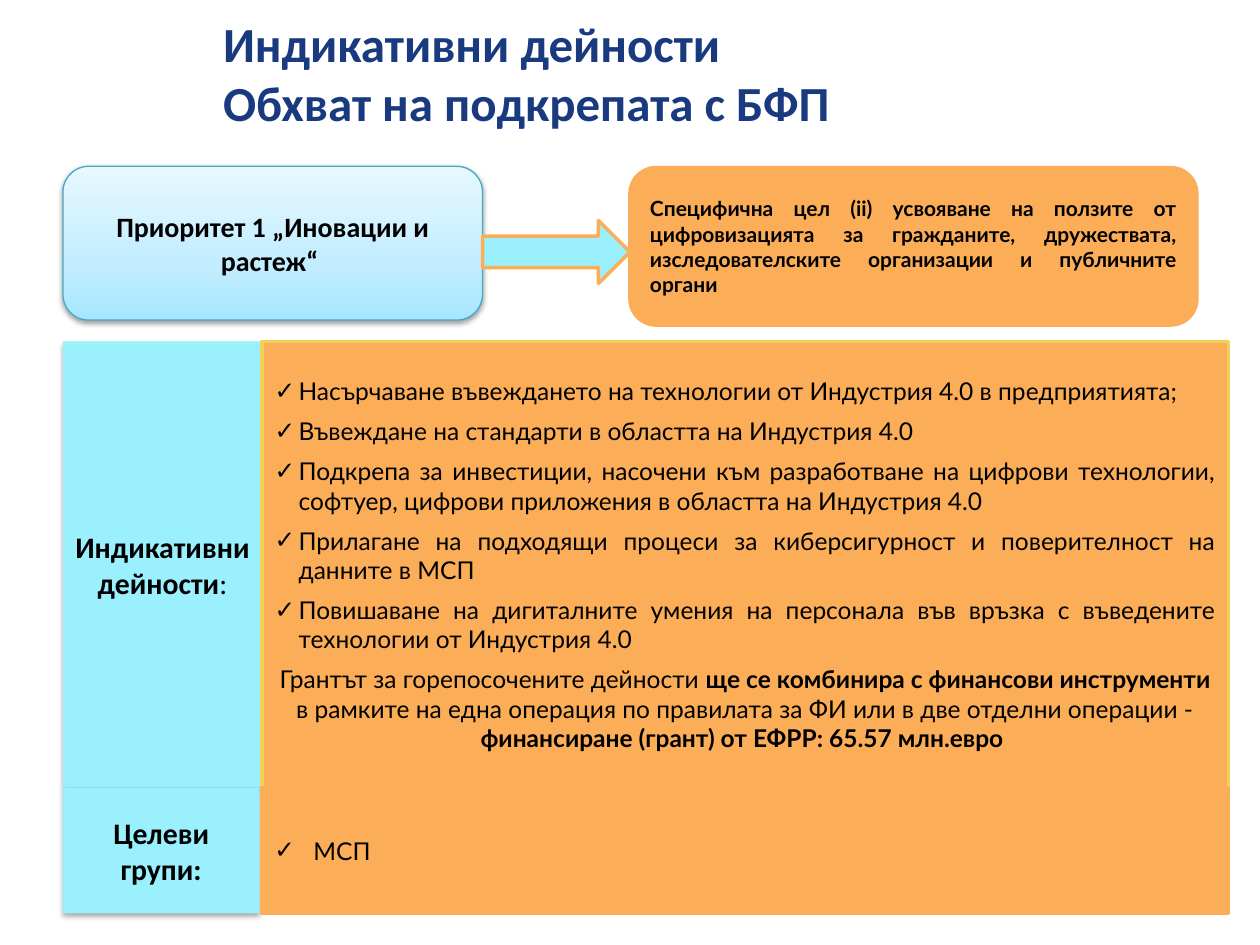
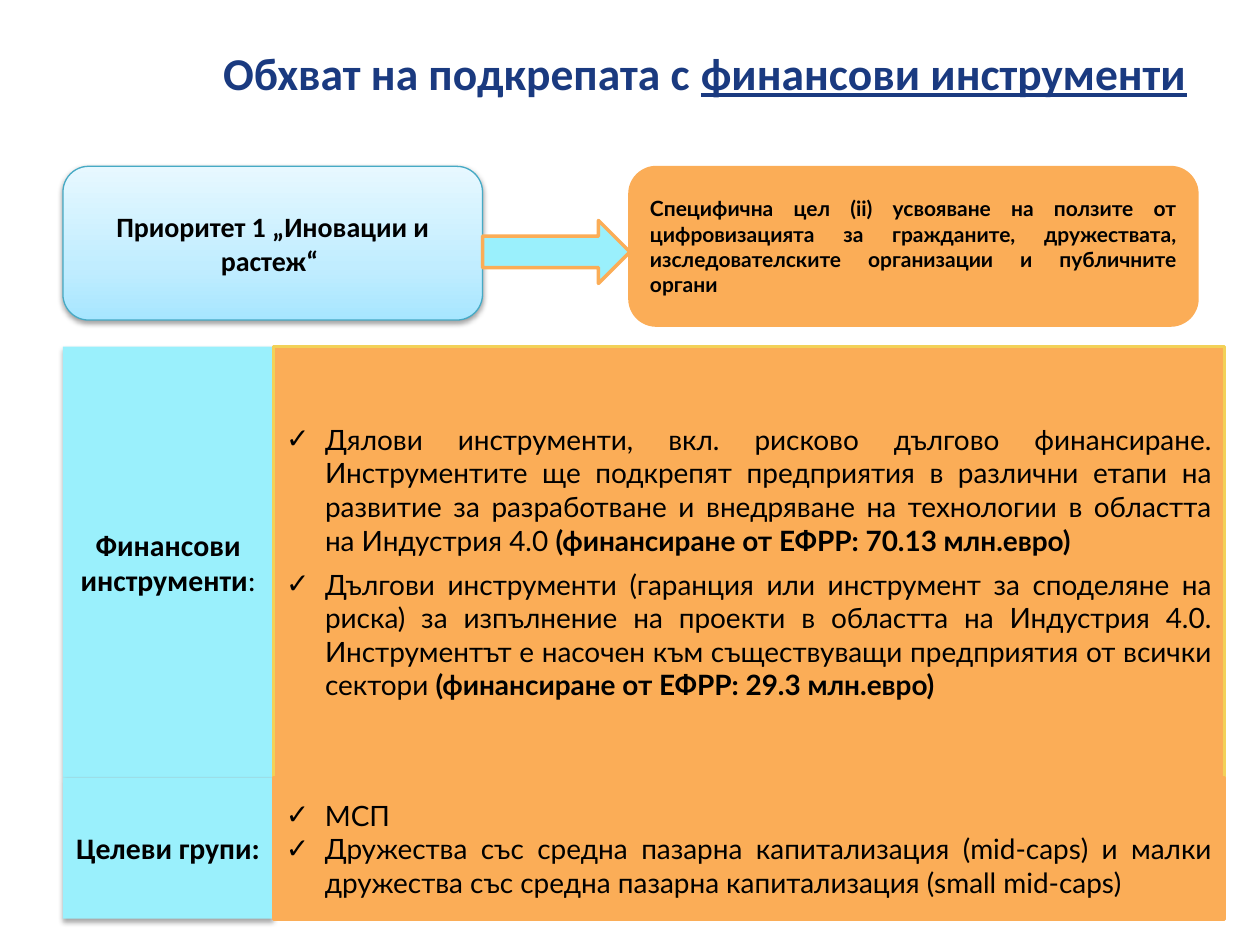
from copy import deepcopy

from lxml.etree import SubElement
from pptx import Presentation
from pptx.dml.color import RGBColor
from pptx.enum.shapes import MSO_SHAPE
from pptx.enum.text import MSO_ANCHOR, MSO_AUTO_SIZE, PP_ALIGN
from pptx.oxml.ns import qn
from pptx.util import Inches, Pt

HUES = {
    "navy": "1A3A80", "black": "000000", "aqua": "9AF0FC",
    "orange": "FBAD57", "gold": "F2D158", "teal": "46AAC5",
}
FADE = [(0, "A7E6FF"), (0.35, "C1EDFF"), (1, "E7F8FF")]
LEFT = 0.5
GOAL = ("Специфична цел (ii) усвояване на ползите от цифровизацията за "
        "гражданите, дружествата, изследователските организации и "
        "публичните органи")


def rgb(name):
    return RGBColor.from_string(HUES[name])


# Text: each run is a string or a (string, marks) pair; marks hold b or u
def write(shape, *runs, size, font="Calibri", color="black", bold=False,
          align=PP_ALIGN.CENTER, hang=0, after=0, inset=0.1):
    frame = shape.text_frame
    frame.word_wrap = True
    frame.auto_size = MSO_AUTO_SIZE.NONE
    frame.vertical_anchor = MSO_ANCHOR.MIDDLE
    frame.margin_left = frame.margin_right = Inches(inset)
    para = frame.paragraphs[0] if not frame.text else frame.add_paragraph()
    props = para._p.get_or_add_pPr()
    props.set("marL", str(Inches(hang)))
    props.set("indent", str(-Inches(hang)))
    if hang:
        SubElement(props, qn("a:buFont")).set("typeface", "Arial")
        SubElement(props, qn("a:buChar")).set("char", "✓")
    else:
        SubElement(props, qn("a:buNone"))
    para.alignment = align
    para.space_before, para.space_after = Pt(0), Pt(after)
    for item in runs:
        words, marks = (item, "") if isinstance(item, str) else item
        for num, line in enumerate(words.split("\n")):
            if num:
                para.add_line_break()
            run = para.add_run()
            run.text = line
            run.font.name, run.font.size = font, Pt(size)
            run.font.bold = bold or "b" in marks
            run.font.underline = "u" in marks
            run.font.color.rgb = rgb(color)


def place(shape, left, top, width, height):
    shape.left, shape.top = Inches(left), Inches(top)
    shape.width, shape.height = Inches(width), Inches(height)


def paint(shape, fill, line=None, weight=2):
    shape.shadow.inherit = False
    if fill:
        shape.fill.solid()
        shape.fill.fore_color.rgb = rgb(fill)
    if line:
        shape.line.color.rgb = rgb(line)
        shape.line.width = Pt(weight)
    else:
        shape.line.fill.background()


def block(slide, kind, box, fill, line=None, weight=2):
    shape = slide.shapes.add_shape(kind, *map(Inches, box))
    paint(shape, fill, line, weight)
    return shape


def shade(shape, alpha, dist):
    effects = shape._element.spPr.find(qn("a:effectLst"))
    outer = SubElement(effects, qn("a:outerShdw"), blurRad=str(Pt(3.1)),
                       dist=str(Pt(dist)), dir="5400000", rotWithShape="0")
    color = SubElement(outer, qn("a:srgbClr"), val=HUES["black"])
    SubElement(color, qn("a:alpha"), val=str(alpha * 1000))


def blend(shape):
    shape.fill.gradient()
    shape.fill.gradient_angle = 90
    stops = shape._element.spPr.find(".//" + qn("a:gsLst"))
    stops.append(deepcopy(stops[0]))
    for stop, (spot, color) in zip(shape.fill.gradient_stops, FADE):
        stop.position = spot
        stop.color.rgb = RGBColor.from_string(color)


# Title and the band from priority to goal, the same on each slide
def start(deck, *title, size):
    slide = deck.slides.add_slide(deck.slide_layouts[1])
    head = slide.shapes.title
    place(head, 1.67, 0, 8.22, 1.15)
    write(head, *title, size=size, color="navy", bold=True,
          align=PP_ALIGN.LEFT)

    first = block(slide, MSO_SHAPE.ROUNDED_RECTANGLE,
                  (LEFT, 1.32, 3.33, 1.22), None, "teal", 0.75)
    blend(first)
    shade(first, 38, 1.6)
    write(first, "Приоритет 1 „Иновации и растеж“ ", size=16, bold=True)

    goal = block(slide, MSO_SHAPE.ROUNDED_RECTANGLE,
                 (5, 1.33, 4.5, 1.25), "orange", "orange")
    write(goal, GOAL, size=12, font="Lato", bold=True,
          align=PP_ALIGN.JUSTIFY)
    block(slide, MSO_SHAPE.RIGHT_ARROW, (3.83, 1.75, 1.17, 0.5),
          "aqua", "orange")
    return slide


# Side label, with slim insets so that its longest word fits on a line
def label(slide, top, width, height, *runs):
    shape = block(slide, MSO_SHAPE.RECTANGLE, (LEFT, top, width, height),
                  "aqua")
    shade(shape, 35, 1.8)
    write(shape, *runs, size=17, inset=0.08)


# Main list in the body placeholder, brought in front of its label
def panel(slide, *box):
    body = slide.placeholders[1]
    body.element.getparent().append(body.element)
    place(body, *box)
    paint(body, "orange", "gold")
    return body


def items(shape, rows, **form):
    for row in rows:
        write(shape, *row, font="Lato", align=PP_ALIGN.JUSTIFY, **form)


def grants(deck):
    slide = start(deck, "Индикативни дейности\nОбхват на подкрепата с БФП",
                  size=28)
    label(slide, 2.71, 1.58, 3.54, ("Индикативни дейности", "b"), ":")
    body = panel(slide, 2.08, 2.71, 7.67, 3.54)
    items(body, [
        ["Насърчаване въвеждането на технологии от Индустрия 4.0 в "
         "предприятията;"],
        ["Въвеждане на стандарти в областта на Индустрия 4.0"],
        ["Подкрепа за инвестиции, насочени към разработване на цифрови "
         "технологии, софтуер, цифрови приложения в областта на "
         "Индустрия 4.0"],
        ["Прилагане на подходящи процеси за киберсигурност и "
         "поверителност на данните в МСП"],
        ["Повишаване на дигиталните умения на персонала във връзка с "
         "въведените технологии от Индустрия 4.0"],
    ], size=14, hang=0.19, after=6)
    write(body, "Грантът за горепосочените дейности ",
          ("ще се комбинира с финансови инструменти", "b"),
          " в рамките на една операция по правилата за ФИ или в две "
          "отделни операции - ",
          ("финансиране (грант) от ЕФРР: 65.57 млн.евро ", "b"),
          size=14, font="Lato", after=6)
    label(slide, 6.25, 1.56, 1, ("Целеви групи:", "b"))
    groups = block(slide, MSO_SHAPE.RECTANGLE, (2.08, 6.25, 7.67, 1),
                   "orange", "orange")
    items(groups, [["МСП"]], size=14, hang=0.31, after=6)


def funds(deck):
    slide = start(deck, "Обхват на подкрепата с ",
                  ("финансови инструменти", "u"), size=26)
    label(slide, 2.75, 1.67, 3.42, ("Финансови инструменти", "b"), ":")
    body = panel(slide, 2.17, 2.75, 7.55, 3.42)
    items(body, [
        ["Дялови инструменти, вкл. рисково дългово финансиране. "
         "Инструментите ще подкрепят предприятия в различни етапи на "
         "развитие за разработване и внедряване на технологии в "
         "областта на Индустрия 4.0 ",
         ("(финансиране от ЕФРР: 70.13 млн.евро)", "b")],
        ["Дългови инструменти (гаранция или инструмент за споделяне на "
         "риска) за изпълнение на проекти в областта на Индустрия 4.0. "
         "Инструментът е насочен към съществуващи предприятия от всички "
         "сектори ",
         ("(финансиране от ЕФРР: 29.3 млн.евро)", "b")],
    ], size=16, hang=0.31, after=6)
    label(slide, 6.17, 1.67, 1.12, ("Целеви групи:", "b"))
    groups = block(slide, MSO_SHAPE.RECTANGLE, (2.17, 6.17, 7.55, 1.13),
                   "orange", "orange")
    items(groups, [
        ["МСП"],
        ["Дружества със средна пазарна капитализация (mid-caps) и малки "
         "дружества със средна пазарна капитализация (small mid-caps)"],
    ], size=16, hang=0.31)


def main():
    deck = Presentation()
    deck.slide_width, deck.slide_height = Inches(10), Inches(7.5)
    grants(deck)
    funds(deck)
    deck.save("out.pptx")


if __name__ == "__main__":
    main()
